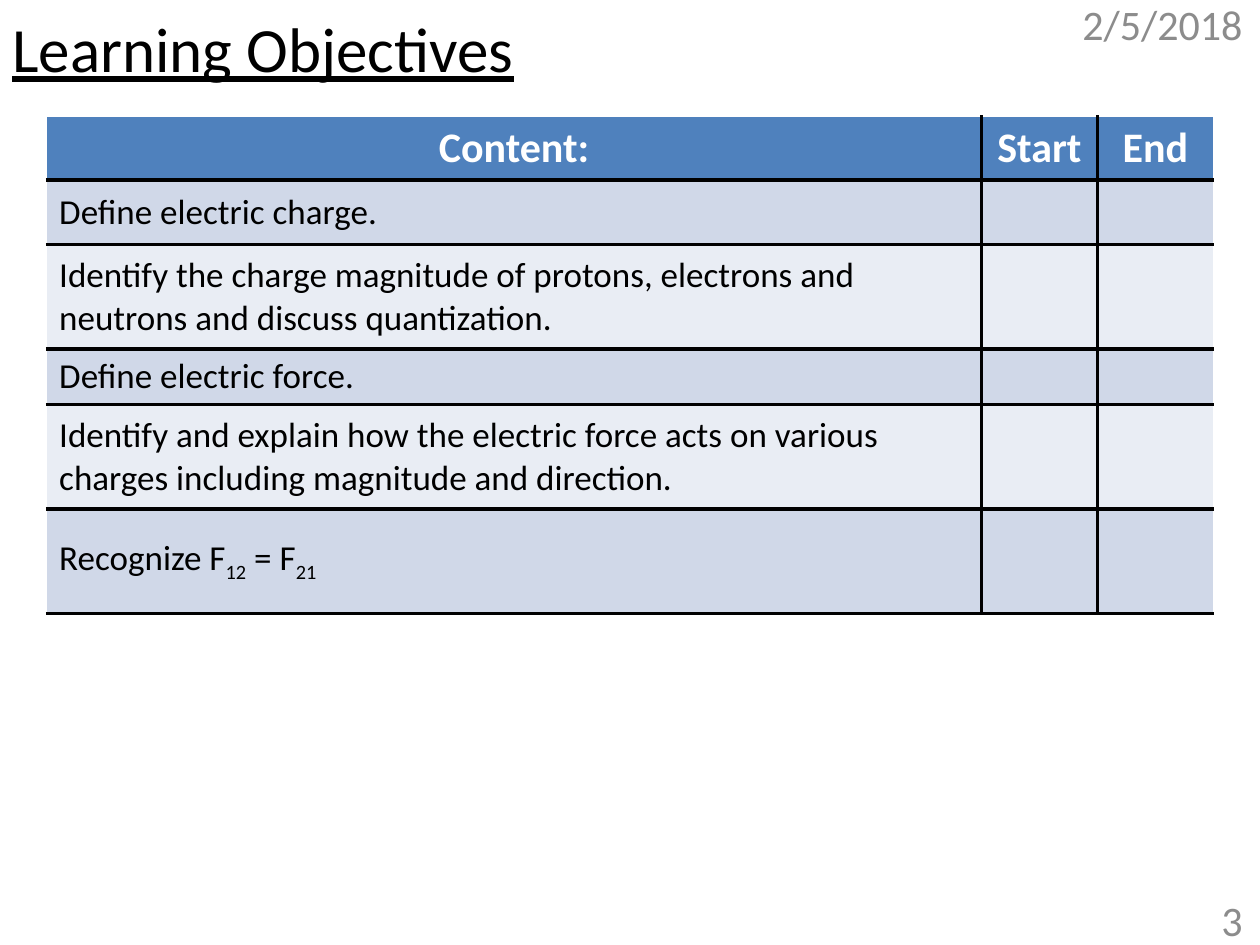
from dataclasses import dataclass

from lxml.etree import SubElement
from pptx import Presentation
from pptx.dml.color import RGBColor as RGB
from pptx.enum.text import MSO_ANCHOR as Anchor, PP_ALIGN as Align
from pptx.oxml.ns import qn
from pptx.util import Inches, Pt


@dataclass(frozen=True)
class Theme:
    font: str = "Calibri"
    ink: str = "000000"
    paper: str = "FFFFFF"
    grey: str = "8C8C8C"
    head: str = "4F81BD"
    bands: tuple = ("D0D8E8", "E9EDF4")
    title: int = 36
    label: int = 24
    body: int = 20
    rule: float = 2.25
    edge: float = 1


THEME = Theme()
COLS = (7.42, 0.92, 0.92)
HEADS = ("Content:", "Start", "End")
# Row height and text runs; every second run is a subscript.
GOALS = (
    (0.51, ["Define electric charge."]),
    (0.83, ["Identify the charge magnitude of protons, electrons and "
            "neutrons and discuss quantization."]),
    (0.44, ["Define electric force."]),
    (0.83, ["Identify and explain how the electric force acts on various "
            "charges including magnitude and direction."]),
    (0.83, ["Recognize F", "12", " = F", "21"]),
)


def style(para, size, color, align=Align.LEFT, bold=False):
    para.alignment = align
    font = para.font
    font.name, font.size, font.bold = THEME.font, Pt(size), bold
    font.color.rgb = RGB.from_string(color)


def add_text(slide, box, text, size, color, align=Align.LEFT):
    frame = slide.shapes.add_textbox(*map(Inches, box)).text_frame
    frame.word_wrap = True
    frame.vertical_anchor = Anchor.MIDDLE
    para = frame.paragraphs[0]
    para.text = text
    style(para, size, color, align)
    return para


def add_runs(para, runs):
    """Write the runs, lowering every second one."""
    for i, text in enumerate(runs):
        run = para.add_run()
        run.text = text
        if i % 2:
            run.font._element.set("baseline", "-25000")


def set_edge(cell, side, color, width):
    line = SubElement(cell._tc.get_or_add_tcPr(), qn(f"a:ln{side}"),
                      w=str(Pt(width)))
    fill = SubElement(line, qn("a:solidFill"))
    SubElement(fill, qn("a:srgbClr"), val=color)


def dress(cell, row, col):
    """Rule the inner edges in black, the outer ones in white, and fill."""
    outer = {"L": col == 0, "R": col == len(COLS) - 1,
             "T": row == 0, "B": False}
    for side, out in outer.items():
        color, width = ((THEME.paper, THEME.edge) if out
                        else (THEME.ink, THEME.rule))
        set_edge(cell, side, color, width)
    cell.vertical_anchor = Anchor.MIDDLE
    cell.fill.solid()
    color = THEME.bands[(row - 1) % 2] if row else THEME.head
    cell.fill.fore_color.rgb = RGB.from_string(color)


def add_goals(slide, left, top):
    highs = [0.51] + [high for high, _ in GOALS]
    size = (left, top, sum(COLS), sum(highs))
    table = slide.shapes.add_table(len(highs), len(COLS),
                                   *map(Inches, size)).table
    for col, width in zip(table.columns, COLS):
        col.width = Inches(width)
    for r, high in enumerate(highs):
        table.rows[r].height = Inches(high)
        for c in range(len(COLS)):
            dress(table.cell(r, c), r, c)
    for c, text in enumerate(HEADS):
        para = table.cell(0, c).text_frame.paragraphs[0]
        para.text = text
        style(para, THEME.label, THEME.paper, Align.CENTER, True)
    for r, (_, runs) in enumerate(GOALS, 1):
        para = table.cell(r, 0).text_frame.paragraphs[0]
        add_runs(para, runs)
        style(para, THEME.body, THEME.ink)


def main():
    deck = Presentation()
    deck.slide_width, deck.slide_height = Inches(10), Inches(7.5)
    slide = deck.slides.add_slide(deck.slide_layouts[6])
    title = add_text(slide, (0, 0, 9, 0.75), "Learning Objectives",
                     THEME.title, THEME.ink)
    title.font.underline = True
    add_goals(slide, 0.37, 0.92)
    add_text(slide, (8.25, -0.01, 1.71, 0.4), "2/5/2018",
             THEME.label, THEME.grey, Align.RIGHT)
    add_text(slide, (9.33, 7.1, 0.63, 0.4), "3",
             THEME.label, THEME.grey, Align.RIGHT)
    deck.save("out.pptx")


if __name__ == "__main__":
    main()
